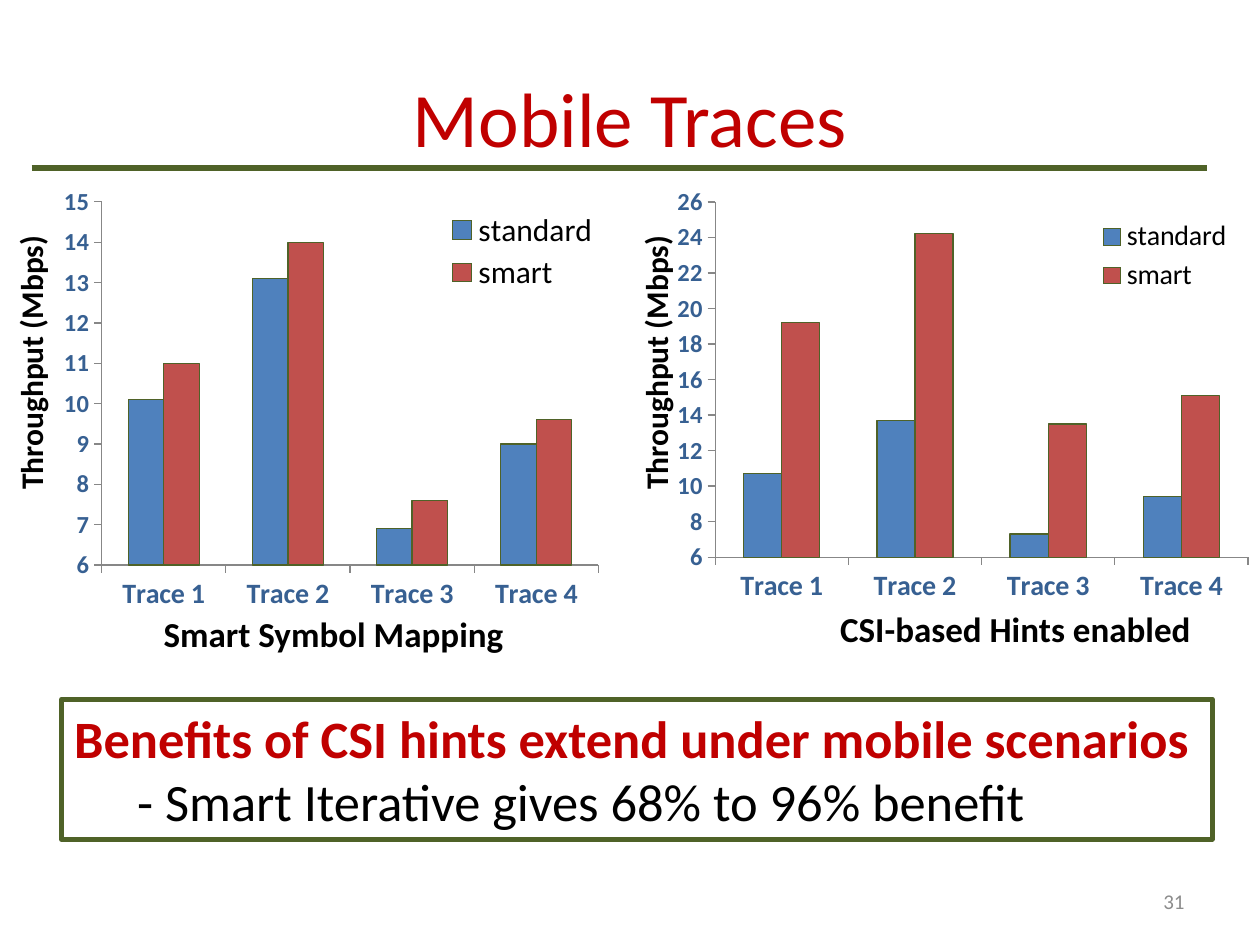
from lxml import etree
from pptx import Presentation
from pptx.chart.data import CategoryChartData
from pptx.dml.color import RGBColor
from pptx.enum.chart import XL_CHART_TYPE, XL_LEGEND_POSITION, XL_TICK_MARK
from pptx.enum.shapes import MSO_CONNECTOR, MSO_SHAPE
from pptx.enum.text import MSO_ANCHOR, PP_ALIGN
from pptx.oxml import parse_xml
from pptx.oxml.ns import nsdecls, qn
from pptx.util import Pt

COLUMN = XL_CHART_TYPE.COLUMN_CLUSTERED
LEGEND_RIGHT = XL_LEGEND_POSITION.RIGHT
TICK_OUT = XL_TICK_MARK.OUTSIDE
STRAIGHT = MSO_CONNECTOR.STRAIGHT
RECTANGLE = MSO_SHAPE.RECTANGLE
TOP, MIDDLE = MSO_ANCHOR.TOP, MSO_ANCHOR.MIDDLE
LEFT, CENTER, RIGHT = PP_ALIGN.LEFT, PP_ALIGN.CENTER, PP_ALIGN.RIGHT

FONT = "Calibri"
COLORS = {
    "red": "C00000",
    "green": "4F6228",
    "black": "000000",
    "grey": "8C8C8C",
    "axis": "878787",
    "label": "376092",
    "standard": "4F81BD",
    "smart": "C0504D",
}
TRACES = ["Trace 1", "Trace 2", "Trace 3", "Trace 4"]


def rgb(name):
    return RGBColor.from_string(COLORS[name])


def style_font(font, size, color="black", bold=False):
    font.name = FONT
    font.size = Pt(size)
    font.bold = bold
    font.color.rgb = rgb(color)


def style_line(line, color, width):
    line.color.rgb = rgb(color)
    line.width = Pt(width)


def add_text(slide, text, box, size, color="black", bold=False,
             align=LEFT, anchor=TOP, rotation=0):
    sp = slide.shapes.add_textbox(*map(Pt, box))
    sp.rotation = rotation
    tf = sp.text_frame
    tf.word_wrap = True
    tf.vertical_anchor = anchor
    tf.text = text
    p = tf.paragraphs[0]
    p.alignment = align
    style_font(p.runs[0].font, size, color, bold)


def add_rule(slide, x1, x2, y):
    line = slide.shapes.add_connector(STRAIGHT, Pt(x1), Pt(y), Pt(x2), Pt(y))
    style_line(line.line, "green", 3)
    etree.SubElement(line._element.spPr, qn("a:effectLst"))


def add_summary(slide, box, headline, detail):
    sp = slide.shapes.add_shape(RECTANGLE, *map(Pt, box))
    sp.shadow.inherit = False
    sp.fill.background()
    style_line(sp.line, "green", 3)
    tf = sp.text_frame
    tf.word_wrap = True
    tf.text = headline
    p = tf.paragraphs[0]
    p.alignment = LEFT
    style_font(p.runs[0].font, 30, "red", True)
    p = tf.add_paragraph()
    p.text = detail
    p.alignment = LEFT
    p.level = 1
    p._p.get_or_add_pPr().set("marL", str(Pt(36)))
    style_font(p.runs[0].font, 30)


def set_layout(parent, index, fractions, inner=False):
    """Place a plot area or legend by fractions of the chart frame."""
    for old in parent.findall(qn("c:layout")):
        parent.remove(old)
    target = '<c:layoutTarget val="inner"/>' if inner else ""
    modes = "".join(f'<c:{m}Mode val="edge"/>' for m in "xy")
    sizes = "".join(f'<c:{k} val="{v}"/>' for k, v in zip("xywh", fractions))
    parent.insert(index, parse_xml(
        f'<c:layout {nsdecls("c")}><c:manualLayout>{target}{modes}{sizes}'
        '</c:manualLayout></c:layout>'))


def style_axis(axis, size):
    axis.has_major_gridlines = False
    axis.major_tick_mark = TICK_OUT
    axis.minor_tick_mark = XL_TICK_MARK.NONE
    style_line(axis.format.line, "axis", 0.75)
    style_font(axis.tick_labels.font, size, "label", True)


def add_throughput_chart(slide, box, series, top, step, legend_size, plot, legend):
    data = CategoryChartData()
    data.categories = TRACES
    for name, values in series.items():
        data.add_series(name, values)
    chart = slide.shapes.add_chart(COLUMN, *map(Pt, box), data).chart
    style_font(chart.font, legend_size)
    chart.has_title = False

    # Transparent chart background
    chart.element.find(qn("c:chart")).addnext(parse_xml(
        f'<c:spPr {nsdecls("c", "a")}><a:noFill/><a:ln><a:noFill/></a:ln></c:spPr>'))

    # Columns
    bars = chart.plots[0]
    bars.gap_width = 150
    bars.overlap = 0
    bars.vary_by_categories = False
    for ser in bars.series:
        ser.format.fill.solid()
        ser.format.fill.fore_color.rgb = rgb(ser.name)
        style_line(ser.format.line, "green", 0.75)

    # Axes
    style_axis(chart.category_axis, 16)
    axis = chart.value_axis
    style_axis(axis, 14)
    axis.minimum_scale, axis.maximum_scale, axis.major_unit = 6, top, step
    axis.tick_labels.number_format = "General"
    axis.tick_labels.number_format_is_linked = False

    # Legend and placement
    chart.has_legend = True
    chart.legend.position = LEGEND_RIGHT
    chart.legend.include_in_layout = True
    style_font(chart.legend.font, legend_size)
    set_layout(chart.legend._element, 1, legend)
    set_layout(chart.element.find(".//" + qn("c:plotArea")), 0, plot, inner=True)


def main():
    prs = Presentation()
    prs.slide_width, prs.slide_height = Pt(720), Pt(540)
    slide = prs.slides.add_slide(prs.slide_layouts[6])

    # Heading
    add_text(slide, "Mobile Traces", (36, 21.6, 648, 90), 44, "red",
             align=CENTER, anchor=MIDDLE)
    add_rule(slide, 18, 690, 96)

    # Value axis titles
    for x in (-63.4, 293.8):
        add_text(slide, "Throughput (Mbps)", (x, 191.5, 162, 29), 18,
                 bold=True, rotation=270)

    # Conclusion
    add_summary(slide, (35.3, 399.6, 657.4, 80),
                "Benefits of CSI hints extend under mobile scenarios",
                "- Smart Iterative gives 68% to 96% benefit")

    # Chart captions
    add_text(slide, "Smart Symbol Mapping", (86.4, 346.3, 226, 31.5), 20, bold=True)
    add_text(slide, "CSI-based Hints enabled", (468, 343.4, 224.6, 31.5), 20,
             bold=True, align=CENTER)

    # Charts
    add_throughput_chart(
        slide, (381.6, 103, 338.4, 247.7),
        {"standard": [10.7, 13.7, 7.3, 9.4], "smart": [19.2, 24.2, 13.5, 15.1]},
        top=26, step=2, legend_size=16,
        plot=(0.08, 0.05, 0.9, 0.82), legend=(0.72, 0.08, 0.24, 0.19))
    add_throughput_chart(
        slide, (18, 105.1, 334, 256.3),
        {"standard": [10.1, 13.1, 6.9, 9], "smart": [11, 14, 7.6, 9.6]},
        top=15, step=1, legend_size=18,
        plot=(0.12, 0.04, 0.85, 0.81), legend=(0.7, 0.05, 0.28, 0.2))

    # Slide number
    add_text(slide, "31", (516.2, 500.4, 167.8, 28.8), 12, "grey",
             align=RIGHT, anchor=MIDDLE)

    prs.save("out.pptx")


if __name__ == "__main__":
    main()
